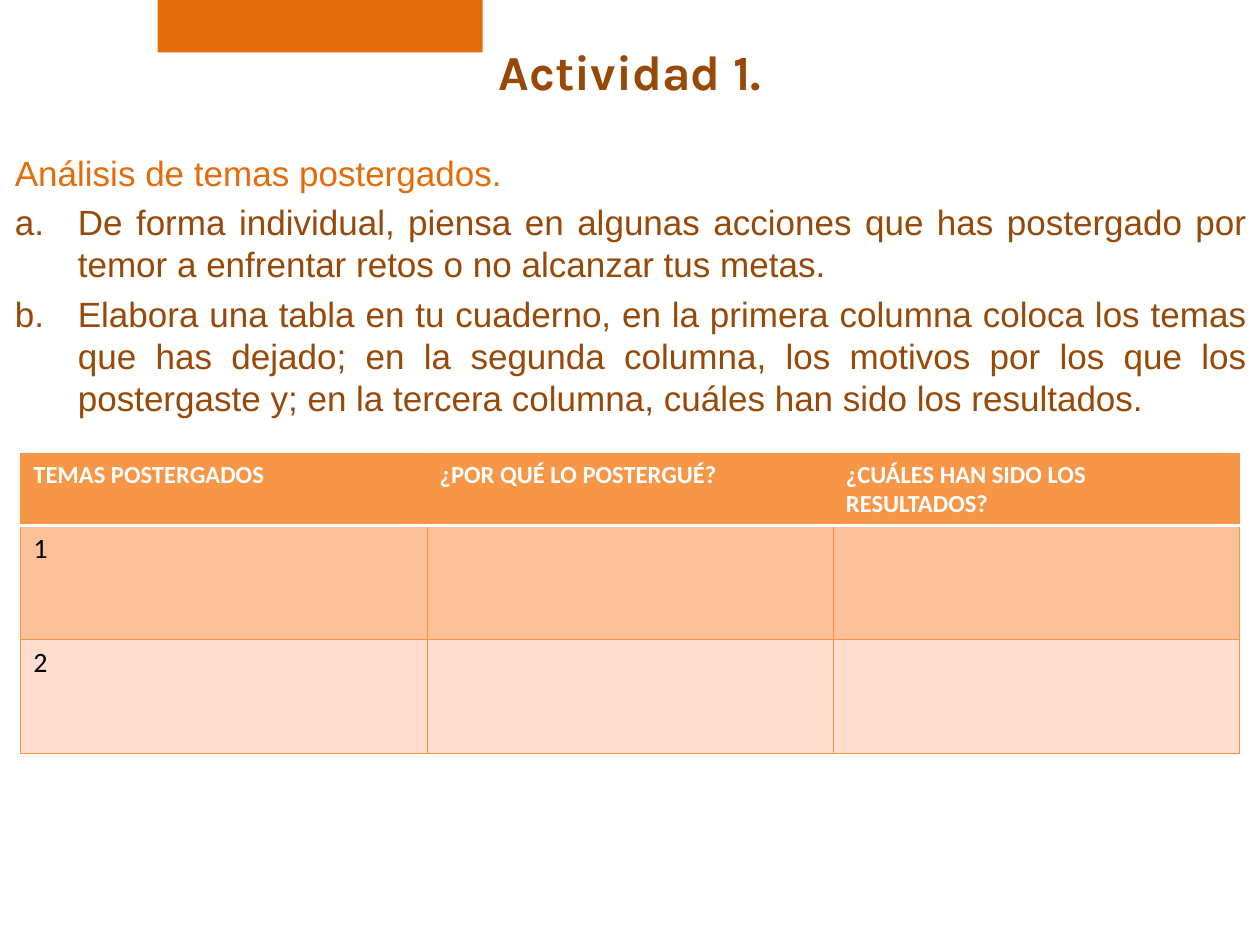
import pptx
import pptx.util
import pptx.dml.color
import pptx.enum.text
import pptx.enum.shapes
import pptx.oxml.ns
import lxml.etree
from pptx.util import Cm, Pt

# Content
TITLE = "Actividad 1."
SUBTITLE = "Análisis de temas postergados."
STEPS = [
    "De forma individual, piensa en algunas acciones que has postergado por "
    "temor a enfrentar retos o no alcanzar tus metas.",
    "Elabora una tabla en tu cuaderno, en la primera columna coloca los temas "
    "que has dejado; en la segunda columna, los motivos por los que los "
    "postergaste y; en la tercera columna, cuáles han sido los resultados.",
]
ROWS = [
    ["TEMAS POSTERGADOS", "¿POR QUÉ LO POSTERGUÉ?", "¿CUÁLES HAN SIDO LOS RESULTADOS?"],
    ["1", "", ""],
    ["2", "", ""],
]
ROW_HEIGHTS = [1.45, 2.3, 2.3]
COLUMN_WIDTH = 8.19

THEME = {
    "brown": "984807", "orange": "E46C0A", "white": "FFFFFF", "black": "000000",
    "grid": "F69240", "row_fills": ["F79646", "FCC199", "FFDED0"],
    "title": 28, "body": 20, "header": 14, "cell": 16,
}


def color(code):
    return pptx.dml.color.RGBColor.from_string(code)


def add_span(para, text, font, size, code, bold=False):
    span = para.add_run()
    span.text = text
    span.font.name, span.font.size, span.font.bold = font, Pt(size), bold
    span.font.color.rgb = color(code)


def number_para(para, indent):
    """Letter a paragraph (a., b., ...) with a hanging indent."""
    props = para._p.get_or_add_pPr()
    props.set("marL", str(Cm(indent)))
    props.set("indent", str(-Cm(1.27)))
    bullet = lxml.etree.SubElement(props, pptx.oxml.ns.qn("a:buAutoNum"))
    bullet.set("type", "alphaLcPeriod")


def set_borders(cell, borders):
    props = cell._tc.get_or_add_tcPr()
    for index, (side, (code, width)) in enumerate(borders.items()):
        line = lxml.etree.Element(pptx.oxml.ns.qn("a:ln" + side), w=str(Pt(width)))
        fill = lxml.etree.SubElement(line, pptx.oxml.ns.qn("a:solidFill"))
        lxml.etree.SubElement(fill, pptx.oxml.ns.qn("a:srgbClr"), val=code)
        props.insert(index, line)


def add_title(page):
    box = page.shapes.title
    box.left, box.top, box.width, box.height = Cm(0), Cm(0.71), Cm(25.4), Cm(1.5)
    frame = box.text_frame
    frame.vertical_anchor = pptx.enum.text.MSO_ANCHOR.TOP
    frame.auto_size = pptx.enum.text.MSO_AUTO_SIZE.NONE
    para = frame.paragraphs[0]
    para.alignment = pptx.enum.text.PP_ALIGN.CENTER
    add_span(para, TITLE, "Karla", THEME["title"], THEME["brown"], True)


def add_instructions(page):
    box = page.shapes.add_textbox(Cm(0), Cm(2.92), Cm(25.4), Cm(5.6))
    frame = box.text_frame
    frame.word_wrap = True
    for index, text in enumerate([SUBTITLE] + STEPS):
        para = frame.add_paragraph() if index else frame.paragraphs[0]
        para.alignment = pptx.enum.text.PP_ALIGN.JUSTIFY
        para.line_spacing = Pt(24)
        para.space_before = Pt(4.5 if index else 0)
        if index:
            number_para(para, 1.32)
        else:
            para._p.get_or_add_pPr().set("marL", str(Cm(0.05)))
        add_span(para, text, "Arial", THEME["body"], THEME["brown" if index else "orange"])


def add_band(page):
    band = page.shapes.add_shape(
        pptx.enum.shapes.MSO_SHAPE.RECTANGLE, Cm(3.18), Cm(0), Cm(6.55), Cm(1.06))
    band.shadow.inherit = False
    band.fill.solid()
    band.fill.fore_color.rgb = color(THEME["orange"])
    band.line.fill.background()


def add_topics_table(page):
    count = len(ROWS[0])
    table = page.shapes.add_table(
        len(ROWS), count, Cm(0.42), Cm(9.14),
        Cm(COLUMN_WIDTH * count), Cm(sum(ROW_HEIGHTS))).table
    for column in table.columns:
        column.width = Cm(COLUMN_WIDTH)
    grid, rule = (THEME["grid"], 0.75), (THEME["white"], 2)
    for r, texts in enumerate(ROWS):
        table.rows[r].height = Cm(ROW_HEIGHTS[r])
        header = r == 0
        for c, text in enumerate(texts):
            cell = table.cell(r, c)
            cell.fill.solid()
            cell.fill.fore_color.rgb = color(THEME["row_fills"][r])
            set_borders(cell, {"L": grid, "R": grid,
                               "T": rule if r == 1 else grid,
                               "B": rule if header else grid})
            if text:
                add_span(cell.text_frame.paragraphs[0], text, "Calibri",
                         THEME["header" if header else "cell"],
                         THEME["white" if header else "black"], header)


def main():
    deck = pptx.Presentation()
    deck.slide_width, deck.slide_height = Cm(25.4), Cm(19.05)
    page = deck.slides.add_slide(deck.slide_layouts[5])
    add_title(page)
    add_instructions(page)
    add_band(page)
    add_topics_table(page)
    deck.save("out.pptx")


if __name__ == "__main__":
    main()
